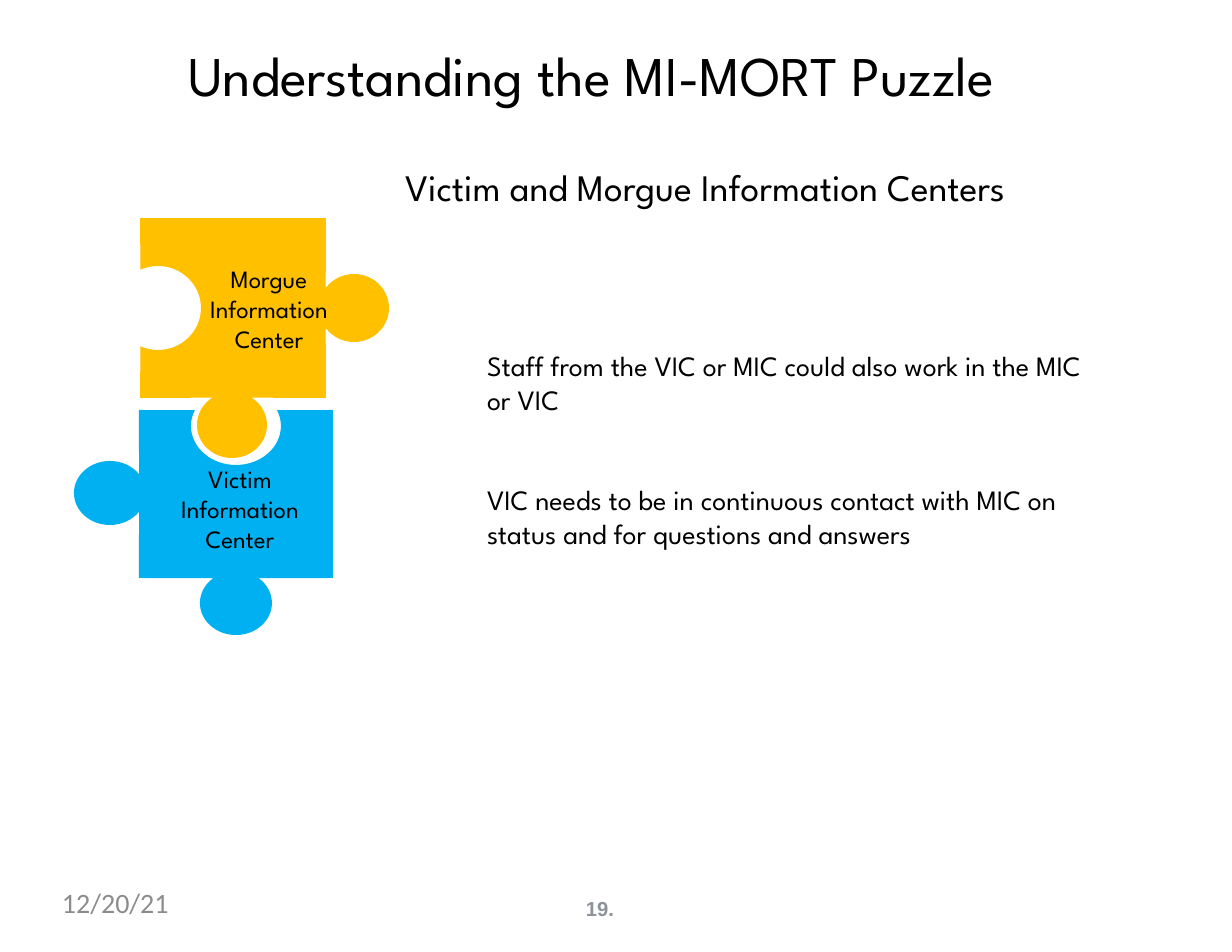
from math import cos, radians, sin, tan

from lxml import etree
from pptx import Presentation, util as u
from pptx.dml.color import RGBColor
from pptx.enum.text import PP_ALIGN
from pptx.oxml.ns import qn

PX = 914400 / 112
COLORS = {"black": "000000", "date": "8C8C8C", "number": "8D929B",
          "victim": "00B0F0", "morgue": "FFC000"}
FONT = "League Spartan"

TITLE = "Understanding the MI-MORT Puzzle"
SUBTITLE = "Victim and Morgue Information Centers"
NOTES = ["Staff from the VIC or MIC could also work in the MIC or VIC",
         "VIC needs to be in continuous contact with MIC on status and for questions and answers"]

# Outlines run clockwise from the top left corner. A pair is a corner; a longer
# entry is an arc: centre x, centre y, radius x, radius y, from and to angle.
PIECES = [
    {"color": "victim", "label": ["Victim", "Information", "Center"],
     "label_box": (159, 458, 162, 102),
     "outline": [(139, 410), (236, 426, 45, 39, 204, -24), (333, 410),
                 (333, 578), (236, 603, 36, 32, -51, 231), (139, 578),
                 (110, 493, 36, 32, 36, 324)]},
    {"color": "morgue", "label": ["Morgue", "Information", "Center"],
     "label_box": (188, 258, 162, 102),
     "outline": [(140, 218), (326, 218), (354, 308, 35, 34, -144, 144),
                 (326, 398), (232, 425, 35, 33, -56, 236), (140, 398),
                 (158, 308, 43, 42, 114, -114)]},
]


def px(length):
    return u.Emu(round(length * PX))


def rgb(name):
    return RGBColor.from_string(COLORS[name])


def add_text(shapes, box, lines, size, color="black", font=FONT, bold=False,
             align=PP_ALIGN.LEFT, inset=True, gap=0):
    """Add one paragraph per line, with gap points between them."""
    frame = shapes.add_textbox(*map(px, box)).text_frame
    frame.word_wrap = True
    if not inset:
        frame.margin_left = frame.margin_right = 0
        frame.margin_top = frame.margin_bottom = 0
    for i, line in enumerate(lines):
        paragraph = frame.add_paragraph() if i else frame.paragraphs[0]
        paragraph.alignment = align
        if i and gap:
            paragraph.space_before = u.Pt(gap)
        run = paragraph.add_run()
        run.text = line
        run.font.name, run.font.size, run.font.bold = font, u.Pt(size), bold
        run.font.color.rgb = rgb(color)
    return frame


def arc_points(cx, cy, rx, ry, start, end):
    """Return the arc's first point and its Bezier points, three per quadrant."""
    low, high = sorted((start, end))
    stops = [low, *(a for a in range(-360, 361, 90) if low < a < high), high]
    if start > end:
        stops.reverse()
    points = [(cx + rx * cos(radians(start)), cy + ry * sin(radians(start)))]
    for a, b in zip(stops, stops[1:]):
        a, b = radians(a), radians(b)
        k = 4 / 3 * tan((b - a) / 4)
        points += [(cx + rx * (cos(a) - k * sin(a)), cy + ry * (sin(a) + k * cos(a))),
                   (cx + rx * (cos(b) + k * sin(b)), cy + ry * (sin(b) - k * cos(b))),
                   (cx + rx * cos(b), cy + ry * sin(b))]
    return points[0], points[1:]


def add_outline(shapes, outline):
    """Draw corners as lines and arcs as cubic curves."""
    points, curve_starts = [], []
    for part in outline:
        if len(part) == 2:
            points.append(part)
            continue
        first, controls = arc_points(*part)
        points.append(first)
        curve_starts += range(len(points), len(points) + len(controls), 3)
        points += controls
    start, *rest = [(px(x), px(y)) for x, y in points]
    builder = shapes.build_freeform(*start)
    builder.add_line_segments(rest, close=True)
    shape = builder.convert_to_shape()
    segments = list(next(shape.element.iter(qn("a:path"))))
    for i in curve_starts:
        curve = etree.Element(qn("a:cubicBezTo"))
        segments[i].addprevious(curve)
        for line in segments[i:i + 3]:
            curve.append(line[0])
            line.getparent().remove(line)
    return shape


def add_piece(slide, piece):
    shapes = slide.shapes.add_group_shape().shapes
    shape = add_outline(shapes, piece["outline"])
    shape.shadow.inherit = False
    shape.fill.solid()
    shape.fill.fore_color.rgb = rgb(piece["color"])
    shape.line.fill.background()
    add_text(shapes, piece["label_box"], piece["label"], 16, align=PP_ALIGN.CENTER)


def main():
    deck = Presentation()
    deck.slide_width, deck.slide_height = px(1232), px(952)
    slide = deck.slides.add_slide(deck.slide_layouts[6])
    shapes = slide.shapes

    add_text(shapes, (62, 886, 283, 47), ["12/20/21"], 18, "date", "Calibri", inset=False)
    number = add_text(shapes, (581, 897, 35, 26), ["19."], 13, "number", "Arial",
                      bold=True, inset=False)
    number.margin_left = px(5)
    number.paragraphs[0].line_spacing = u.Pt(15.3)

    add_text(shapes, (177, 35, 989, 80), [TITLE], 36)
    for piece in PIECES:
        add_piece(slide, piece)
    add_text(shapes, (243, 159, 924, 56), [SUBTITLE], 24, align=PP_ALIGN.CENTER)
    add_text(shapes, (476, 343, 641, 249), NOTES, 18, gap=43.2)
    deck.save("out.pptx")


if __name__ == "__main__":
    main()
